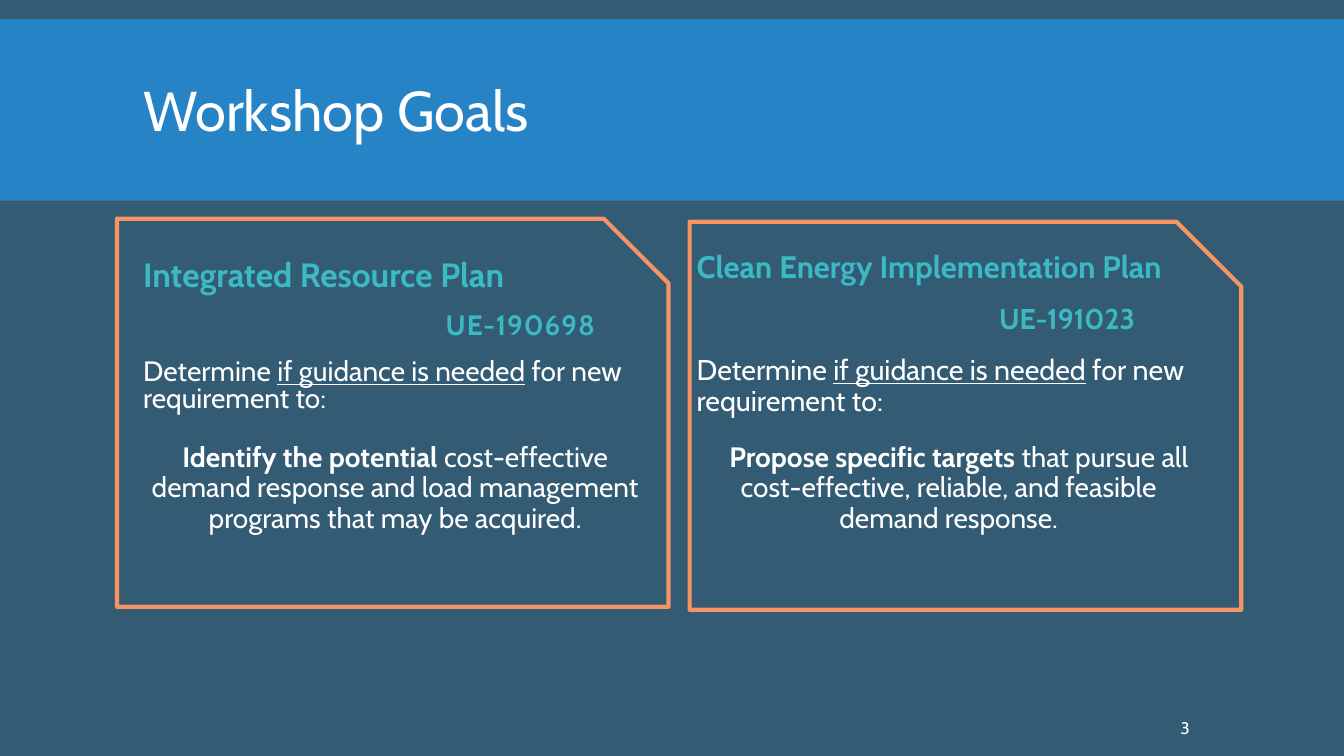
from pptx import Presentation
from pptx.dml.color import RGBColor
from pptx.enum import shapes, text
from pptx.util import Inches, Pt

FONT = "Cabin"
WHITE, TEAL, ORANGE, BLUE, SLATE = "FFFFFF", "3BBAC3", "F69463", "2683C6", "335B74"


def rgb(value):
    return RGBColor.from_string(value)


def add_run(p, words, size, color=WHITE, bold=False, underline=False):
    r = p.add_run()
    r.text = words
    r.font.name, r.font.size = FONT, Pt(size)
    r.font.bold, r.font.underline = bold, underline
    r.font.color.rgb = rgb(color)
    return r


prs = Presentation()
prs.slide_width, prs.slide_height = Inches(13.33), Inches(7.5)
s = prs.slides.add_slide(prs.slide_layouts[4])
s.background.fill.solid()
s.background.fill.fore_color.rgb = rgb(SLATE)

band = s.shapes.add_shape(shapes.MSO_SHAPE.RECTANGLE, 0, Inches(0.19), prs.slide_width, Inches(1.8))
band.shadow.inherit = False
band.fill.solid()
band.fill.fore_color.rgb = rgb(BLUE)
band.line.fill.background()
s.shapes._spTree.insert(2, band._element)

title = s.shapes.title
title.left, title.top, title.width, title.height = map(Inches, (1.32, 0.31, 10.7, 1.65))
title.text_frame.vertical_anchor = text.MSO_ANCHOR.MIDDLE
p = title.text_frame.paragraphs[0]
p.alignment, p.line_spacing = text.PP_ALIGN.LEFT, 0.85
add_run(p, "Workshop Goals", 40)

goals = [
    dict(left=1.32, inset=0.51, spacing=0.8, plan="Integrated Resource Plan", plan_size=24,
         docket="UE-190698", size=20, tracking=70, indent=0, action="Identify the potential ",
         rest="cost-effective demand response and load management programs that may be acquired.",
         frame=(1.16, 2.17)),
    dict(left=6.81, inset=0.41, spacing=0.9, plan="Clean Energy Implementation Plan", plan_size=22.2,
         docket="UE-191023", size=20.4, tracking=0, indent=0.2, action="Propose specific targets ",
         rest="that pursue all cost-effective, reliable, and feasible demand response.",
         frame=(6.84, 2.2)),
]

for i, goal in enumerate(goals):
    head, body = s.placeholders[2 * i + 1], s.placeholders[2 * i + 2]
    for sp, top, height in ((head, 2.09, 2.25), (body, 4.35, 2.46)):
        sp.left, sp.top, sp.width, sp.height = map(Inches, (goal["left"], top, 5.2, height))
        sp.text_frame.auto_size = text.MSO_AUTO_SIZE.NONE
        sp.text_frame.vertical_anchor = text.MSO_ANCHOR.TOP

    tf = head.text_frame
    tf.margin_top = Inches(goal["inset"])
    plan, docket, task = tf.paragraphs[0], tf.add_paragraph(), tf.add_paragraph()
    for p in (plan, docket, task):
        p.line_spacing = goal["spacing"]
        p.space_before, p.space_after = Pt(0 if p is plan else 12), Pt(2)
    add_run(plan, goal["plan"], goal["plan_size"], TEAL, True)
    docket._p.get_or_add_pPr().set("marL", str(Inches(3)))
    r = add_run(docket, goal["docket"], goal["size"], TEAL, True)
    r.font._element.set("spc", str(goal["tracking"]))
    add_run(task, "Determine ", goal["size"])
    add_run(task, "if guidance is needed", goal["size"], underline=True)
    add_run(task, " for new requirement to:", goal["size"])

    p = body.text_frame.paragraphs[0]
    pPr = p._p.get_or_add_pPr()
    pPr.set("marL", "0")
    pPr.set("indent", str(Inches(goal["indent"])))
    p.alignment, p.line_spacing = text.PP_ALIGN.CENTER, 0.9
    p.space_before, p.space_after = Pt(0), Pt(2)
    pPr.append(pPr.makeelement("{http://schemas.openxmlformats.org/drawingml/2006/main}buNone", {}))
    add_run(p, goal["action"], 20, bold=True)
    add_run(p, goal["rest"], 20)

    left, top = goal["frame"]
    frame = s.shapes.add_shape(shapes.MSO_SHAPE.SNIP_1_RECTANGLE,
                               Inches(left), Inches(top), Inches(5.47), Inches(3.85))
    frame.shadow.inherit = False
    frame.fill.background()
    frame.line.color.rgb = rgb(ORANGE)
    frame.line.width = Pt(3)

number = s.shapes.add_textbox(Inches(11.66), Inches(7.02), Inches(1.03), Inches(0.4))
tf = number.text_frame
tf.word_wrap = True
tf.vertical_anchor = text.MSO_ANCHOR.MIDDLE
tf.margin_left = Inches(0.05)
add_run(tf.paragraphs[0], "3", 12)

prs.save("out.pptx")
